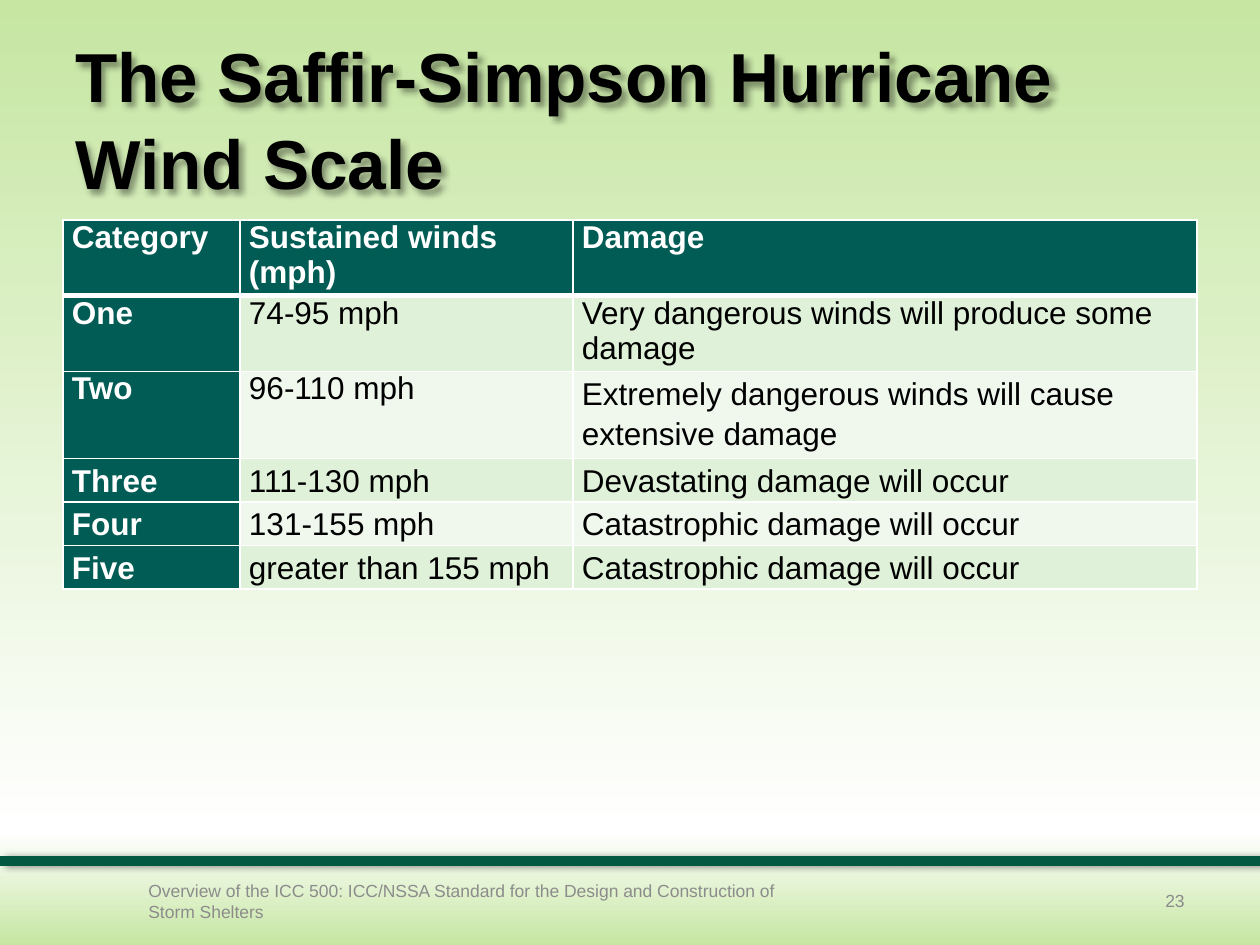
from copy import deepcopy

from lxml.etree import SubElement
from pptx import Presentation
from pptx.dml.color import RGBColor
from pptx.enum.shapes import MSO_CONNECTOR
from pptx.enum.text import MSO_ANCHOR, PP_ALIGN
from pptx.oxml.ns import qn
from pptx.util import Pt

EMU_PER_PX = 914400 / 126
FONT = "Arial"
BLACK, WHITE, GREY = "000000", "FFFFFF", "8C8C8C"
LIME, TEAL, RULE_GREEN = "C6E6A2", "005C54", "035842"
BANDS = ["E0F1DA", "F0F8EE"]

COLUMN_WIDTHS = [177, 333, 624]
ROW_HEIGHTS = [71, 71, 81, 41, 40, 40]
ROWS = [
    ["Category", "Sustained winds (mph)", "Damage"],
    ["One", "74-95 mph", "Very dangerous winds will produce some damage"],
    ["Two", "96-110 mph", "Extremely dangerous winds will cause extensive damage"],
    ["Three", "111-130 mph", "Devastating damage will occur"],
    ["Four", "131-155 mph", "Catastrophic damage will occur"],
    ["Five", "greater than 155 mph", "Catastrophic damage will occur"],
]


def px(n):
    return round(n * EMU_PER_PX)


def rgb(color):
    return RGBColor.from_string(color)


def style_paragraph(p, size, color, bold=False, spacing=None):
    p.line_spacing = spacing
    for r in p.runs:
        r.font.name = FONT
        r.font.size = Pt(size)
        r.font.bold = bold
        r.font.color.rgb = rgb(color)


def add_shadow(s, blur, distance, angle):
    effects = SubElement(s._element.spPr, qn("a:effectLst"))
    shadow = SubElement(effects, qn("a:outerShdw"), blurRad=str(Pt(blur)),
                        dist=str(Pt(distance)), dir=str(angle * 60000),
                        algn="tl", rotWithShape="0")
    color = SubElement(shadow, qn("a:srgbClr"), val=BLACK)
    SubElement(color, qn("a:alpha"), val="40000")


def paint_background(slide):
    """Fade from lime at both edges to white near the bottom."""
    fill = slide.background.fill
    fill.gradient()
    fill.gradient_angle = 90
    stop_list = slide._element.find(".//" + qn("a:gsLst"))
    stop_list.append(deepcopy(stop_list[0]))
    for stop, (position, color) in zip(
            fill.gradient_stops, [(0, LIME), (0.12, WHITE), (1, LIME)]):
        stop.position = position
        stop.color.rgb = rgb(color)


def add_rule(slide, y):
    s = slide.shapes.add_connector(MSO_CONNECTOR.STRAIGHT, 0, px(y), px(1260), px(y))
    s.line.color.rgb = rgb(RULE_GREEN)
    s.line.width = Pt(6)
    add_shadow(s, 4, 3, 0)


def add_text(slide, text, box, size, color, bold=False, align=PP_ALIGN.LEFT, spacing=None):
    s = slide.shapes.add_textbox(*map(px, box))
    tf = s.text_frame
    tf.word_wrap = True
    tf.vertical_anchor = MSO_ANCHOR.MIDDLE
    tf.text = text
    p = tf.paragraphs[0]
    p.alignment = align
    style_paragraph(p, size, color, bold, spacing)
    return s


def add_borders(cell, top, bottom):
    tcPr = cell._tc.get_or_add_tcPr()
    for side, width in [("L", 1), ("R", 1), ("T", top), ("B", bottom)]:
        line = SubElement(tcPr, qn(f"a:ln{side}"), w=str(Pt(width)))
        fill = SubElement(line, qn("a:solidFill"))
        SubElement(fill, qn("a:srgbClr"), val=WHITE)


def fill_cell(cell, text, row, column):
    heading = row == 0 or column == 0
    cell.margin_left = cell.margin_right = px(9)
    cell.margin_top = cell.margin_bottom = 0
    add_borders(cell, 3 if row == 1 else 1, 3 if row == 0 else 1)
    cell.fill.solid()
    cell.fill.fore_color.rgb = rgb(TEAL if heading else BANDS[(row - 1) % 2])
    cell.text_frame.text = text
    loose = row > 2 or (row, column) == (2, 2)
    style_paragraph(cell.text_frame.paragraphs[0], 18, WHITE if heading else BLACK,
                    heading, 1.15 if loose else None)


def add_wind_table(slide, x, y):
    table = slide.shapes.add_table(len(ROWS), len(COLUMN_WIDTHS), px(x), px(y),
                                   px(sum(COLUMN_WIDTHS)), px(sum(ROW_HEIGHTS))).table
    table.first_col = True
    for column, width in zip(table.columns, COLUMN_WIDTHS):
        column.width = px(width)
    for i, (height, texts) in enumerate(zip(ROW_HEIGHTS, ROWS)):
        table.rows[i].height = px(height)
        for j, text in enumerate(texts):
            fill_cell(table.cell(i, j), text, i, j)


def main():
    prs = Presentation()
    prs.slide_width, prs.slide_height = px(1260), px(945)
    slide = prs.slides.add_slide(prs.slide_layouts[6])
    paint_background(slide)
    add_rule(slide, 861)
    title = add_text(slide, "The Saffir-Simpson Hurricane Wind Scale",
                     (63, 38, 1134, 157), 39.6, BLACK, bold=True, spacing=1.04)
    add_shadow(title, 4, 3, 45)
    add_wind_table(slide, 63, 220)
    add_text(slide, "Overview of the ICC 500: ICC/NSSA Standard for the Design "
             "and Construction of Storm Shelters", (136, 876, 693, 50), 10, GREY)
    add_text(slide, "23", (903, 876, 294, 50), 10, GREY, align=PP_ALIGN.RIGHT)
    prs.save("out.pptx")


if __name__ == "__main__":
    main()
